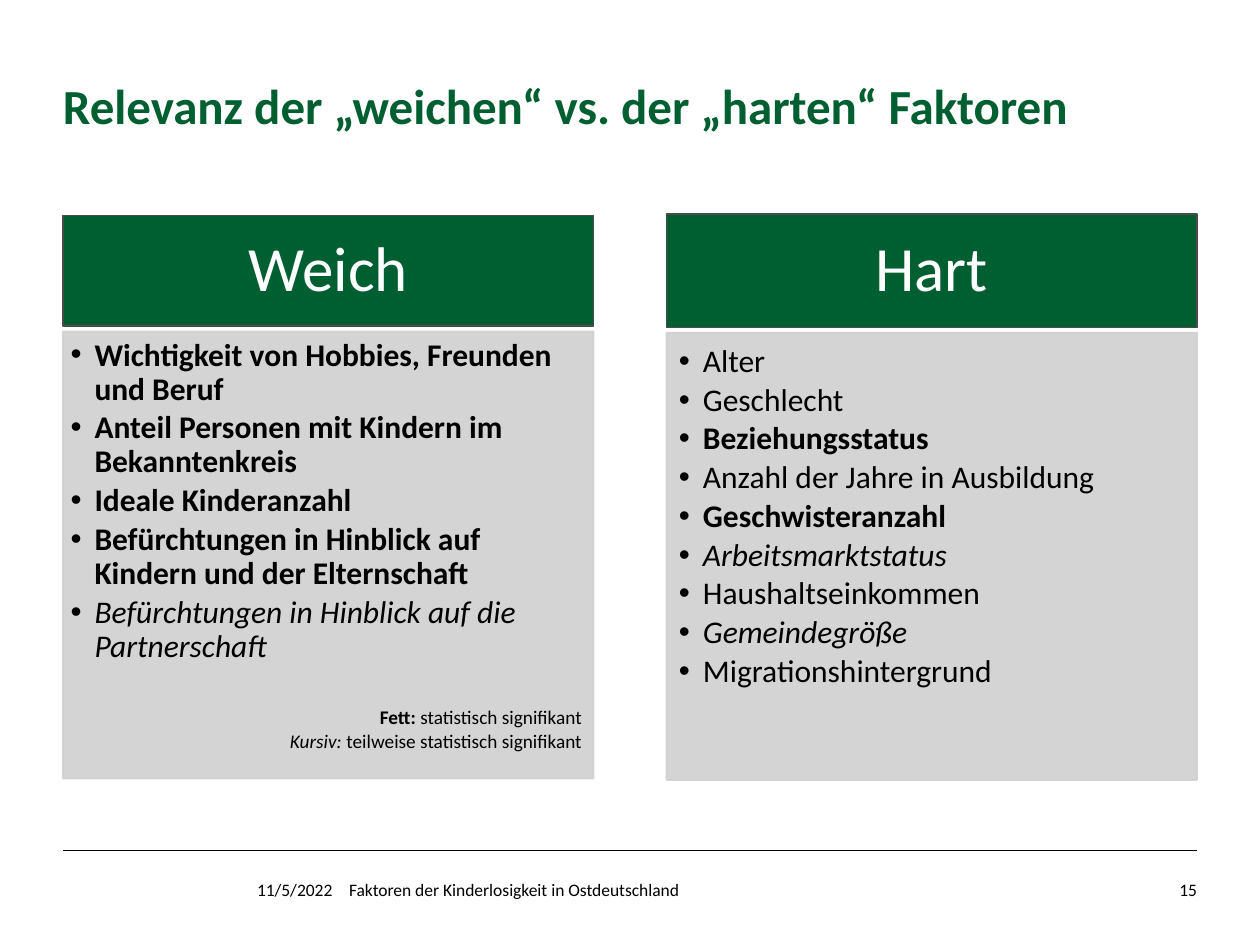
from dataclasses import dataclass

from lxml import etree
from pptx import Presentation
from pptx.dml import color
from pptx.enum import shapes, text
from pptx.oxml import ns
from pptx.util import Inches, Pt

FONT = "Calibri"
GREEN, GREY, EDGE, BLACK, WHITE = "005F30", "D0D0D0", "4A4A49", "000000", "FFFFFF"
LEFT, CENTER, RIGHT = text.PP_ALIGN.LEFT, text.PP_ALIGN.CENTER, text.PP_ALIGN.RIGHT
TOP, MIDDLE, BOTTOM = text.MSO_ANCHOR.TOP, text.MSO_ANCHOR.MIDDLE, text.MSO_ANCHOR.BOTTOM
INDENT = 0.19
COLUMN_W = 4.21


@dataclass
class Run:
    text: str
    bold: bool = False
    italic: bool = False


@dataclass
class Para:
    runs: list[Run]
    size: float = 18
    color: str = BLACK
    align: int = LEFT
    spacing: float = 1.0
    before: float = 0
    after: float = 0
    bullet: bool = False


@dataclass
class Column:
    x: float
    y: float
    head_h: float
    body_y: float
    head: str
    insets: tuple[float, ...]
    paras: list[Para]


def rgb(value: str) -> color.RGBColor:
    return color.RGBColor.from_string(value)


def apply(obj, values: dict) -> None:
    for name, value in values.items():
        setattr(obj, name, value)


def set_bullet(p) -> None:
    pPr = p._p.get_or_add_pPr()
    pPr.set("marL", str(Inches(INDENT)))
    pPr.set("indent", str(-Inches(INDENT)))
    etree.SubElement(pPr, ns.qn("a:buFont")).set("typeface", "Arial")
    etree.SubElement(pPr, ns.qn("a:buChar")).set("char", "•")


def write(sp, paras: list[Para], insets=(0, 0, 0, 0), anchor=TOP) -> None:
    tf = sp.text_frame
    sides = ("margin_left", "margin_top", "margin_right", "margin_bottom")
    apply(tf, dict(zip(sides, map(Inches, insets))))
    apply(tf, {"word_wrap": True, "vertical_anchor": anchor})
    for i, para in enumerate(paras):
        p = tf.add_paragraph() if i else tf.paragraphs[0]
        if para.bullet:
            set_bullet(p)
        apply(p, {"alignment": para.align, "line_spacing": para.spacing,
                  "space_before": Pt(para.before), "space_after": Pt(para.after)})
        for run in para.runs:
            r = p.add_run()
            r.text = run.text
            apply(r.font, {"name": FONT, "size": Pt(para.size),
                           "bold": run.bold, "italic": run.italic})
            r.font.color.rgb = rgb(para.color)


def add_text(s, x: float, y: float, w: float, h: float, para: Para, anchor=TOP) -> None:
    sp = s.shapes.add_textbox(*map(Inches, (x, y, w, h)))
    write(sp, [para], anchor=anchor)


def add_rect(s, x: float, y: float, w: float, h: float, fill: str, line: str,
             alpha: int = 100):
    sp = s.shapes.add_shape(shapes.MSO_SHAPE.RECTANGLE, *map(Inches, (x, y, w, h)))
    sp.shadow.inherit = False
    sp.fill.solid()
    sp.fill.fore_color.rgb = rgb(fill)
    sp.line.color.rgb = rgb(line)
    sp.line.width = Pt(1)
    if alpha < 100:
        for clr in sp._element.spPr.iter(ns.qn("a:srgbClr")):
            etree.SubElement(clr, ns.qn("a:alpha")).set("val", str(alpha * 1000))
    return sp


def add_column(s, col: Column) -> None:
    sp = add_rect(s, col.x, col.y, COLUMN_W, col.head_h, GREEN, EDGE)
    head = Para([Run(col.head)], 36, WHITE, CENTER, 0.9)
    write(sp, [head], (0.28, 0.16, 0.28, 0.16), MIDDLE)
    sp = add_rect(s, col.x, col.body_y, COLUMN_W, 3.55, GREY, GREY, 90)
    write(sp, col.paras, col.insets)


def add_rule(s, x1: float, x2: float, y: float) -> None:
    line = s.shapes.add_connector(shapes.MSO_CONNECTOR.STRAIGHT,
                                  *map(Inches, (x1, y, x2, y)))
    line.line.color.rgb = rgb(BLACK)
    line.line.width = Pt(0.5)
    etree.SubElement(line._element.spPr, ns.qn("a:effectLst"))


def item(label: str, bold: bool = False, italic: bool = False) -> Para:
    return Para([Run(label, bold, italic)], spacing=0.9, after=2.7, bullet=True)


def legend(key: Run, meaning: str, before: float = 0) -> Para:
    return Para([key, Run(meaning)], 11, align=RIGHT, spacing=0.9,
                before=before, after=1.65)


COLUMNS = [
    Column(0.5, 1.71, 0.88, 2.63, "Weich", (0.06, 0.06, 0.09, 0.1), [
        item("Wichtigkeit von Hobbies, Freunden und Beruf", bold=True),
        item("Anteil Personen mit Kindern im Bekanntenkreis", bold=True),
        item("Ideale Kinderanzahl", bold=True),
        item("Befürchtungen in Hinblick auf Kindern und der Elternschaft", bold=True),
        item("Befürchtungen in Hinblick auf die Partnerschaft", italic=True),
        legend(Run("Fett:", bold=True), " statistisch signifikant", before=22.5),
        legend(Run("Kursiv: ", italic=True), "teilweise statistisch signifikant"),
    ]),
    Column(5.29, 1.7, 0.9, 2.64, "Hart", (0.1, 0.1, 0.14, 0.16), [
        item("Alter"),
        item("Geschlecht"),
        item("Beziehungsstatus", bold=True),
        item("Anzahl der Jahre in Ausbildung"),
        item("Geschwisteranzahl", bold=True),
        item("Arbeitsmarktstatus", italic=True),
        item("Haushaltseinkommen"),
        item("Gemeindegröße", italic=True),
        item("Migrationshintergrund"),
    ]),
]

FOOTER = [
    (2.04, 0.63, "11/5/2022", LEFT),
    (2.77, 4.42, "Faktoren der Kinderlosigkeit in Ostdeutschland", LEFT),
    (9.02, 0.48, "15", RIGHT),
]


def main() -> None:
    prs = Presentation()
    apply(prs, {"slide_width": Inches(10), "slide_height": Inches(7.5)})
    s = prs.slides.add_slide(prs.slide_layouts[6])
    add_rule(s, 0.5, 9.5, 6.75)
    title = Run("Relevanz der „weichen“ vs. der „harten“ Faktoren", bold=True)
    add_text(s, 0.5, 0.32, 9, 0.75, Para([title], 28, GREEN, spacing=0.85), BOTTOM)
    for col in COLUMNS:
        add_column(s, col)
    for x, w, label, align in FOOTER:
        add_text(s, x, 6.98, w, 0.16, Para([Run(label)], 10, align=align))
    prs.save("out.pptx")


if __name__ == "__main__":
    main()
